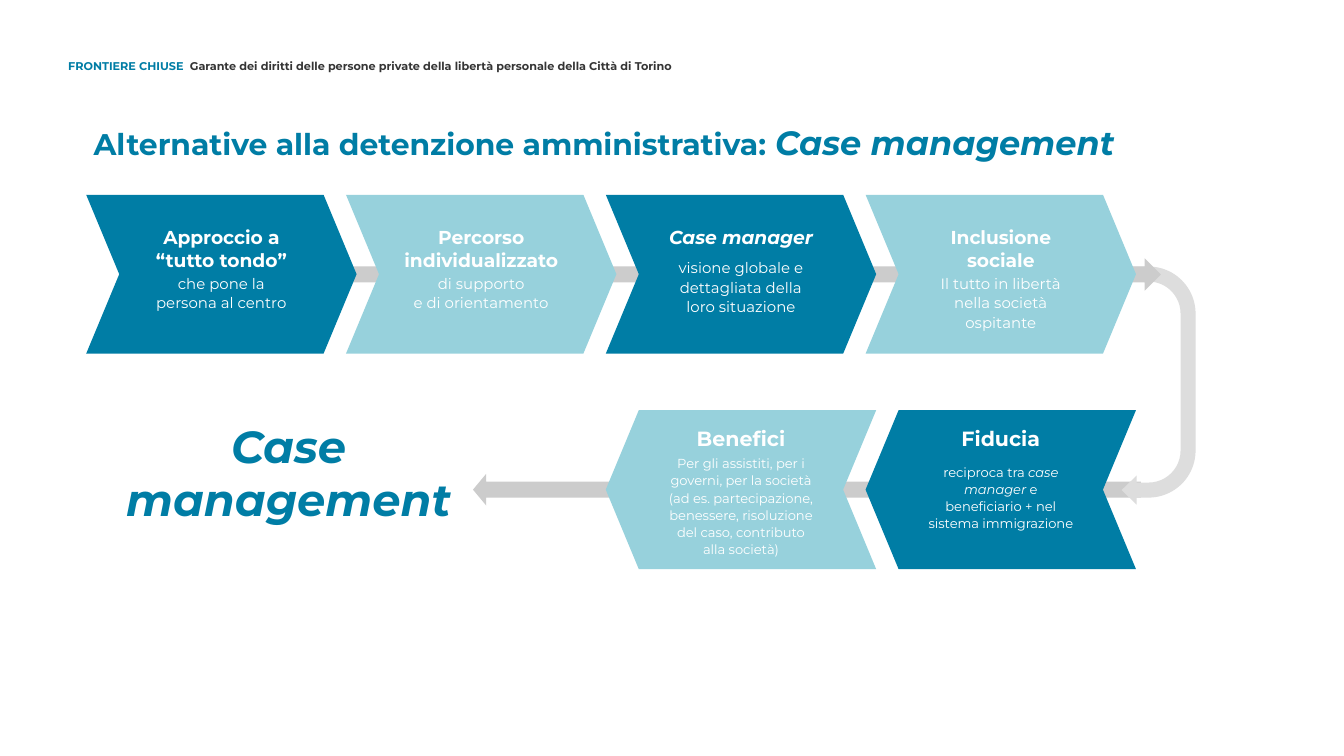
from dataclasses import dataclass

import pptx
import pptx.util
import pptx.dml.color
import pptx.enum.shapes
import pptx.enum.text
import pptx.oxml.ns
from lxml import etree

Cm, Pt = pptx.util.Cm, pptx.util.Pt
RGBColor = pptx.dml.color.RGBColor
SHAPE = pptx.enum.shapes.MSO_SHAPE
ANCHOR = pptx.enum.text.MSO_ANCHOR
ALIGN = pptx.enum.text.PP_ALIGN

FONT = "Montserrat"
BLUE = RGBColor(0x00, 0x7D, 0xA5)
LIGHT = RGBColor(0x97, 0xD1, 0xDC)
WHITE = RGBColor(0xFF, 0xFF, 0xFF)
DARK = RGBColor(0x35, 0x35, 0x35)
GREY = RGBColor(0xCC, 0xCC, 0xCC)
PALE = RGBColor(0xDD, 0xDD, 0xDD)

# Chevron grid, in cm
LEFT, PITCH, STEP_W, STEP_H = 1.63, 4.91, 5.11, 3.0
ROW_TOPS = (3.68, 7.75)
HEAD_DY = (0.49, 0.2)
HEAD_SIZES = (10, 11)
BODY_SIZES = (8, 7)
BODY_W = 3.18


@dataclass
class Run:
    text: str
    size: float
    color: RGBColor = WHITE
    bold: bool = False
    italic: bool = False


@dataclass
class Step:
    col: int
    row: int
    color: RGBColor
    head: str
    body: list[list[tuple[str, bool]]]  # paragraphs of (text, italic)
    body_dy: float
    head_w: float = 3.12
    head_italic: bool = False

    @property
    def left(self) -> float:
        return LEFT + self.col * PITCH


STEPS = [
    Step(0, 0, BLUE, "Approccio a “tutto tondo”",
         [[("che pone la persona al centro", False)]], 1.37),
    Step(1, 0, LIGHT, "Percorso individualizzato",
         [[("di supporto", False)], [("e di orientamento", False)]], 1.37, head_w=3.43),
    Step(2, 0, BLUE, "Case manager",
         [[("visione globale e dettagliata della loro situazione", False)]],
         1.07, head_italic=True),
    Step(3, 0, LIGHT, "Inclusione sociale",
         [[("Il tutto in libertà nella società ospitante", False)]], 1.37),
    Step(3, 1, BLUE, "Fiducia",
         [[("reciproca tra ", False), ("case manager", True),
           (" e beneficiario + nel sistema immigrazione", False)]], 0.89),
    Step(2, 1, LIGHT, "Benefici",
         [[("Per gli assistiti, per i governi, per la società (ad es. partecipazione, "
            "benessere, risoluzione del caso, contributo alla società)", False)]], 0.73),
]


def place(s, x: float, y: float, w: float, h: float) -> None:
    s.left, s.top, s.width, s.height = Cm(x), Cm(y), Cm(w), Cm(h)


def write(tf, paragraphs: list[list[Run]], inset=(0.18, 0.1), align=ALIGN.CENTER,
          anchor=ANCHOR.TOP, spacing=1.0) -> None:
    tf.word_wrap = True
    tf.auto_size = pptx.enum.text.MSO_AUTO_SIZE.NONE
    tf.vertical_anchor = anchor
    tf.margin_left = tf.margin_right = Cm(inset[0])
    tf.margin_top = tf.margin_bottom = Cm(inset[1])
    for i, runs in enumerate(paragraphs):
        p = tf.add_paragraph() if i else tf.paragraphs[0]
        p.alignment = align
        p.line_spacing = spacing
        for run in runs:
            r = p.add_run()
            r.text = run.text
            r.font.name = FONT
            r.font.size = Pt(run.size)
            r.font.bold = run.bold
            r.font.italic = run.italic
            r.font.color.rgb = run.color


def add_text(s, x: float, y: float, w: float, h: float, paragraphs, **options):
    box = s.shapes.add_textbox(Cm(x), Cm(y), Cm(w), Cm(h))
    write(box.text_frame, paragraphs, **options)
    return box


def paint(sp, color: RGBColor) -> None:
    sp.shadow.inherit = False
    sp.fill.solid()
    sp.fill.fore_color.rgb = color
    sp.line.fill.background()


def add_preset(s, kind, x: float, y: float, w: float, h: float, color: RGBColor,
               adjustments, flip: bool = False):
    sp = s.shapes.add_shape(kind, Cm(x), Cm(y), Cm(w), Cm(h))
    for i, value in enumerate(adjustments):
        sp.adjustments[i] = value
    if flip:
        sp._element.spPr.xfrm.set("flipH", "1")
    paint(sp, color)
    return sp


def add_chevron(s, step: Step) -> None:
    add_preset(s, SHAPE.CHEVRON, step.left, ROW_TOPS[step.row], STEP_W, STEP_H,
               step.color, [0.208], flip=step.row == 1)


def add_step_text(s, step: Step) -> None:
    top, center = ROW_TOPS[step.row], step.left + STEP_W / 2
    head = Run(step.head, HEAD_SIZES[step.row], bold=True, italic=step.head_italic)
    add_text(s, center - step.head_w / 2, top + HEAD_DY[step.row], step.head_w, 0.71,
             [[head]])
    body = [[Run(text, BODY_SIZES[step.row], italic=italic) for text, italic in runs]
            for runs in step.body]
    add_text(s, center - BODY_W / 2, top + step.body_dy, BODY_W, 1.22, body, spacing=1.1)


def add_return_arrow(s) -> None:
    tip, neck, end, mid = 8.94, 9.19, 21.56, 9.25
    points = [(neck, mid - 0.3), (neck, mid - 0.15), (end, mid - 0.15),
              (end, mid + 0.15), (neck, mid + 0.15), (neck, mid + 0.3), (tip, mid)]
    points = [(Cm(x), Cm(y)) for x, y in points]
    fb = s.shapes.build_freeform(*points[0])
    fb.add_line_segments(points[1:], close=True)
    paint(fb.convert_to_shape(), GREY)


def add_tab_stop(p, position: float) -> None:
    tabs = etree.SubElement(p._p.get_or_add_pPr(), pptx.oxml.ns.qn("a:tabLst"))
    etree.SubElement(tabs, pptx.oxml.ns.qn("a:tab"), pos=str(Cm(position)), algn="l")


def main() -> None:
    prs = pptx.Presentation()
    prs.slide_width, prs.slide_height = Cm(25.4), Cm(14.28)
    s = prs.slides.add_slide(prs.slide_layouts[5])

    # Title and running header
    place(s.shapes.title, 1.52, 2.06, 21.08, 1.37)
    write(s.shapes.title.text_frame,
          [[Run("Alternative alla detenzione amministrativa: ", 16, BLUE, True),
            Run("Case management", 18, BLUE, True, True)]],
          inset=(0.25, 0.25), align=ALIGN.LEFT)
    header = add_text(
        s, 1.04, 1.02, 14.71, 0.46,
        [[Run("FRONTIERE CHIUSE\t", 6, BLUE, True),
          Run("Garante dei diritti delle persone private della libertà personale "
              "della Città di Torino", 6, DARK, True)]],
        inset=(0.25, 0.25), align=ALIGN.LEFT, anchor=ANCHOR.MIDDLE)
    add_tab_stop(header.text_frame.paragraphs[0], 2.3)

    # Arrows behind the steps
    add_return_arrow(s)
    turn = add_preset(s, SHAPE.U_TURN_ARROW, 19.33, 6.27, 4.5, 2.03, PALE,
                      [0.14, 0.136, 0.141, 0.438, 0.689])
    turn.rotation = 90
    add_preset(s, SHAPE.LEFT_ARROW, 2.31, 4.88, 19.63, 0.61, GREY, [0.5, 0.5], flip=True)

    # Steps
    for step in STEPS:
        add_chevron(s, step)
    for step in STEPS:
        add_step_text(s, step)

    # Outcome
    add_text(s, 1.96, 7.8, 6.99, 2.9, [[Run("Case management", 24, BLUE, True, True)]])

    prs.save("out.pptx")


if __name__ == "__main__":
    main()
